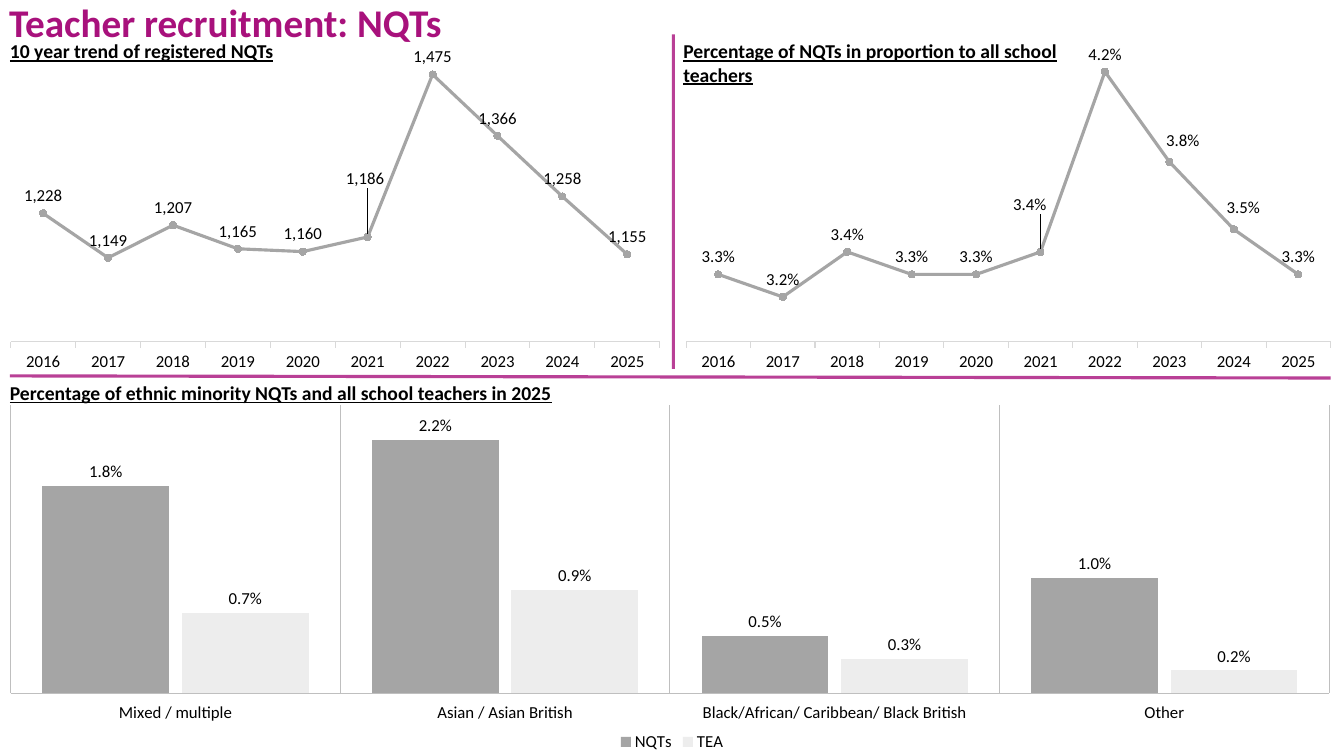
from dataclasses import dataclass

from lxml.etree import SubElement
from pptx import Presentation
from pptx.chart.data import CategoryChartData
from pptx.dml.color import RGBColor
from pptx.enum.chart import XL_CHART_TYPE as ChartType
from pptx.enum.chart import XL_LABEL_POSITION as LabelPosition
from pptx.enum.chart import XL_LEGEND_POSITION as LegendPosition
from pptx.enum.chart import XL_MARKER_STYLE as MarkerStyle
from pptx.enum.chart import XL_TICK_LABEL_POSITION as TickLabels
from pptx.enum.chart import XL_TICK_MARK as TickMark
from pptx.enum.shapes import MSO_CONNECTOR as Connector
from pptx.enum.text import MSO_ANCHOR as Anchor
from pptx.enum.text import MSO_AUTO_SIZE as AutoSize
from pptx.oxml import parse_xml
from pptx.oxml.ns import nsdecls, qn
from pptx.util import Pt


@dataclass(frozen=True)
class Theme:
    font: str = "Calibri"
    accent: str = "A8117C"
    text: str = "000000"
    nqts: str = "A5A5A5"
    teachers: str = "EDEDED"
    axis: str = "D9D9D9"
    grid: str = "BFBFBF"
    title_size: int = 28
    heading_size: int = 14
    chart_size: int = 12


THEME = Theme()
YEARS = [str(year) for year in range(2016, 2026)]
REGISTERED = [1228, 1149, 1207, 1165, 1160, 1186, 1475, 1366, 1258, 1155]
PROPORTION = [0.033, 0.032, 0.034, 0.033, 0.033, 0.034, 0.042, 0.038, 0.035, 0.033]
GROUPS = ["Mixed / multiple", "Asian / Asian British",
          "Black/African/ Caribbean/ Black British", "Other"]


def apply(target, **formats):
    for name, value in formats.items():
        setattr(target, name, value)


def style_font(font, size, color=THEME.text, **formats):
    apply(font, name=THEME.font, size=Pt(size), **formats)
    font.color.rgb = RGBColor.from_string(color)


def style_line(line, color, width):
    line.color.rgb = RGBColor.from_string(color)
    line.width = Pt(width)


def paint(fill, color):
    fill.solid()
    fill.fore_color.rgb = RGBColor.from_string(color)


# Text and dividers
def add_text(page, frame, text, size, color=THEME.text, spacing=None,
             underline=None, **formats):
    box = page.shapes.add_textbox(*map(Pt, frame))
    apply(box.text_frame, word_wrap=True, **formats)
    para = box.text_frame.paragraphs[0]
    if spacing:
        para.line_spacing = spacing
    span = para.add_run()
    span.text = text
    style_font(span.font, size, color, bold=True, underline=underline)


def add_heading(page, frame, text):
    add_text(page, frame, text, THEME.heading_size, underline=True,
             auto_size=AutoSize.SHAPE_TO_FIT_TEXT)


def add_divider(page, *ends):
    divider = page.shapes.add_connector(Connector.STRAIGHT, *map(Pt, ends))
    style_line(divider.line, THEME.accent, 2.25)
    properties = divider._element.spPr
    color = next(properties.iter(qn("a:srgbClr")))
    SubElement(color, qn("a:alpha"), val="80000")
    SubElement(properties, qn("a:effectLst"))


# Charts
def manual_layout(inner=False, **places):
    target = '<c:layoutTarget val="inner"/>' if inner else ""
    modes = '<c:xMode val="edge"/><c:yMode val="edge"/>' if inner else ""
    sizes = "".join(f'<c:{key} val="{value}"/>' for key, value in places.items())
    return parse_xml(f'<c:layout {nsdecls("c")}><c:manualLayout>{target}{modes}'
                     f'{sizes}</c:manualLayout></c:layout>')


def add_chart(page, kind, frame, plot, categories, series, number_format, limits):
    data = CategoryChartData(number_format=number_format)
    data.categories = categories
    for name, values in series:
        data.add_series(name, values)
    chart = page.shapes.add_chart(kind, *map(Pt, frame), data).chart
    apply(chart, has_title=False, has_legend=False)
    style_font(chart.font, THEME.chart_size)

    plot_area = chart._chartSpace.chart.plotArea
    for layout in plot_area.findall(qn("c:layout")):
        plot_area.remove(layout)
    plot_area.insert(0, manual_layout(True, **dict(zip("xywh", plot))))

    low, high = limits
    apply(chart.value_axis, visible=False, has_major_gridlines=False,
          minimum_scale=low, maximum_scale=high)
    apply(chart.category_axis, minor_tick_mark=TickMark.NONE,
          tick_label_position=TickLabels.LOW)
    style_font(chart.category_axis.tick_labels.font, THEME.chart_size)
    chart.plots[0].vary_by_categories = False
    return chart


def label_series(series, position, number_format):
    labels = series.data_labels
    apply(labels, show_value=True, position=position,
          number_format=number_format, number_format_is_linked=False)
    style_font(labels.font, THEME.chart_size)


def add_trend(page, left, plot, values, number_format, limits, moved_labels):
    chart = add_chart(page, ChartType.LINE_MARKERS, (left, 3, 479, 267), plot, YEARS,
                      [("Series 1", values)], number_format, limits)
    chart.category_axis.major_tick_mark = TickMark.OUTSIDE
    style_line(chart.category_axis.format.line, THEME.axis, 0.75)
    series = chart.plots[0].series[0]
    series.smooth = False
    style_line(series.format.line, THEME.nqts, 2.25)
    apply(series.marker, style=MarkerStyle.CIRCLE, size=5)
    paint(series.marker.format.fill, THEME.nqts)
    style_line(series.marker.format.line, THEME.nqts, 0.75)
    label_series(series, LabelPosition.ABOVE, number_format)
    # Shift crowded labels off the line
    for year, (x, y) in moved_labels.items():
        label = series.points[YEARS.index(year)].data_label
        style_font(label.font, THEME.chart_size)
        label.position = LabelPosition.RIGHT
        label.position = LabelPosition.ABOVE
        index = label.font and series.points[YEARS.index(year)]
        for element in series._element.iter(qn("c:dLbl")):
            if element.find(qn("c:idx")).get("val") == str(YEARS.index(year)):
                element.insert(1, manual_layout(x=x, y=y))


def add_ethnicity_bars(page):
    chart = add_chart(page, ChartType.COLUMN_CLUSTERED, (0, 287.5, 960, 252.5),
                      (0.008, 0.008, 0.981, 0.815), GROUPS,
                      [("NQTs", [0.018, 0.022, 0.005, 0.01]),
                       ("TEA", [0.007, 0.009, 0.003, 0.002])], "0.0%", (0, 0.025))
    apply(chart.plots[0], gap_width=50, overlap=-10)
    axis = chart.category_axis
    apply(axis, major_tick_mark=TickMark.NONE, has_major_gridlines=True)
    for line in (axis.format.line, axis.major_gridlines.format.line):
        style_line(line, THEME.grid, 0.75)
    for series, color in zip(chart.plots[0].series, (THEME.nqts, THEME.teachers)):
        paint(series.format.fill, color)
        label_series(series, LabelPosition.OUTSIDE_END, "0.0%")
    chart.has_legend = True
    apply(chart.legend, position=LegendPosition.BOTTOM, include_in_layout=False)
    style_font(chart.legend.font, THEME.chart_size)


def main():
    deck = Presentation()
    apply(deck, slide_width=Pt(960), slide_height=Pt(540))
    page = deck.slides.add_slide(deck.slide_layouts[6])

    # Charts
    add_trend(page, 0, (0.016, 0, 0.968, 0.903), REGISTERED, "#,##0", (1000, 1600),
              {"2021": (-0.004, -0.11)})
    add_trend(page, 481, (0.019, 0, 0.961, 0.904), PROPORTION, "0.0%", (0.03, 0.045),
              {"2021": (-0.016, -0.08), "2023": (0.02, -0.01), "2024": (0.014, -0.01)})
    add_ethnicity_bars(page)

    # Title and headings
    add_text(page, (-0.5, 0, 381.5, 37.5), "Teacher recruitment: NQTs",
             THEME.title_size, THEME.accent, spacing=0.8, vertical_anchor=Anchor.MIDDLE)
    add_heading(page, (0, 24.5, 337, 24.5), "10 year trend of registered NQTs")
    add_heading(page, (481, 24.5, 291, 41),
                "Percentage of NQTs in proportion to all school teachers")
    add_heading(page, (0, 268.5, 615, 24.5),
                "Percentage of ethnic minority NQTs and all school teachers in 2025")

    # Dividers
    add_divider(page, 7, 268.5, 950.5, 270)
    add_divider(page, 481, 24.5, 481, 263.5)

    deck.save("out.pptx")


if __name__ == "__main__":
    main()
